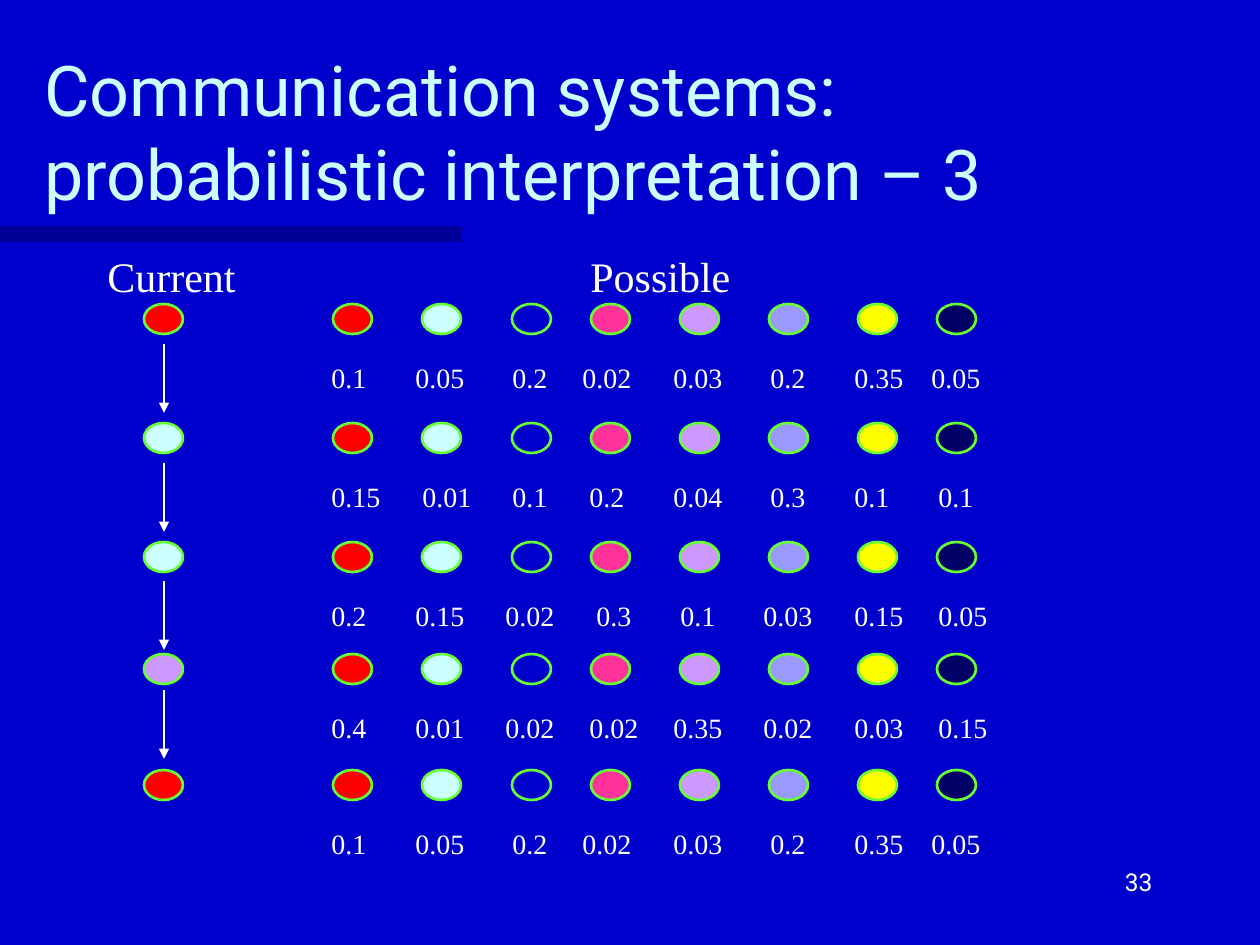
from pptx import Presentation
from pptx.dml.color import RGBColor
from pptx.enum.shapes import MSO_CONNECTOR as Conn, MSO_SHAPE as Shape
from pptx.enum.text import MSO_ANCHOR as Anchor, PP_ALIGN as Align
from pptx.oxml.ns import qn
from pptx.util import Pt
from lxml.etree import SubElement as sub

PX = 914400 / 126
SERIF = "Times New Roman"


def hue(code):
    return RGBColor.from_string(code)


def text(words, x, y, w, h, size=16, font=SERIF, color="FFFFFF",
         align=Align.LEFT, anchor=Anchor.TOP, stops=()):
    box = slide.shapes.add_textbox(*(round(n * PX) for n in (x, y, w, h)))
    frame = box.text_frame
    frame.word_wrap = True
    frame.vertical_anchor = anchor
    para = frame.paragraphs[0]
    para.alignment = align
    if stops:
        tabs = sub(para._p.get_or_add_pPr(), qn("a:tabLst"))
        for stop in stops:
            sub(tabs, qn("a:tab"), pos=str(round(stop * PX)), algn="l")
    run = para.add_run()
    run.text = words
    run.font.size = Pt(size)
    run.font.name = font
    run.font.color.rgb = hue(color)


deck = Presentation()
deck.slide_width = round(1260 * PX)
deck.slide_height = round(945 * PX)
slide = deck.slides.add_slide(deck.slide_layouts[6])
slide.background.fill.solid()
slide.background.fill.fore_color.rgb = hue("0000CC")

bar = slide.shapes.add_shape(Shape.RECTANGLE, 0, round(226 * PX), round(461 * PX), round(16 * PX))
bar.shadow.inherit = False
bar.fill.solid()
bar.fill.fore_color.rgb = hue("000066")
bar.line.fill.background()
tint = bar.fill._xPr.find(qn("a:solidFill"))[0]
sub(tint, qn("a:alpha"), val="50000")

text("Communication systems: probabilistic interpretation – 3", 32, 63, 1071, 158,
     size=40, font="Roboto", color="CCFFFF", anchor=Anchor.BOTTOM)
text("33", 903, 861, 262, 63, size=14, font="Roboto", align=Align.RIGHT)
text("Current\tPossible", 95, 244, 922, 63, size=24, stops=[483])

states = [
    (333, "FF0000"), (422, "CCFFFF"), (512, "0000CC"), (591, "FF3399"),
    (680, "CC99FF"), (769, "9999FF"), (858, "FFFF00"), (937, "000066"),
]
rows = [
    (304, "FF0000", "0.1 0.05 0.2 0.02 0.03 0.2 0.35 0.05", [84, 181, 251, 342, 439, 523, 600]),
    (423, "CCFFFF", "0.15 0.01 0.1 0.2 0.04 0.3 0.1 0.1", [91, 181, 258, 342, 439, 523, 607]),
    (542, "CCFFFF", "0.2 0.15 0.02 0.3 0.1 0.03 0.15 0.05", [84, 174, 265, 349, 432, 523, 607]),
    (654, "CC99FF", "0.4 0.01 0.02 0.02 0.35 0.02 0.03 0.15", [84, 174, 258, 342, 432, 523, 607]),
    (770, "FF0000", "0.1 0.05 0.2 0.02 0.03 0.2 0.35 0.05", [84, 181, 251, 342, 439, 523, 600]),
]
for y, now, odds, stops in rows:
    for x, color in states + [(144, now)]:
        dot = slide.shapes.add_shape(Shape.OVAL, *(round(n * PX) for n in (x, y, 39, 30)))
        dot.shadow.inherit = False
        dot.fill.solid()
        dot.fill.fore_color.rgb = hue(color)
        dot.line.color.rgb = hue("66FF33")
        dot.line.width = Pt(1.5)
    text(odds.replace(" ", "\t"), 319, y + 50, 737, 47, stops=stops)

for y in (344, 463, 581, 690):
    arrow = slide.shapes.add_connector(
        Conn.STRAIGHT, *(round(n * PX) for n in (164, y, 164, y + 69)))
    arrow.line.color.rgb = hue("FFFFFF")
    arrow.line.width = Pt(0.75)
    sub(arrow.line._get_or_add_ln(), qn("a:tailEnd"), type="triangle")
    sub(arrow._element.spPr, qn("a:effectLst"))

deck.save("out.pptx")
